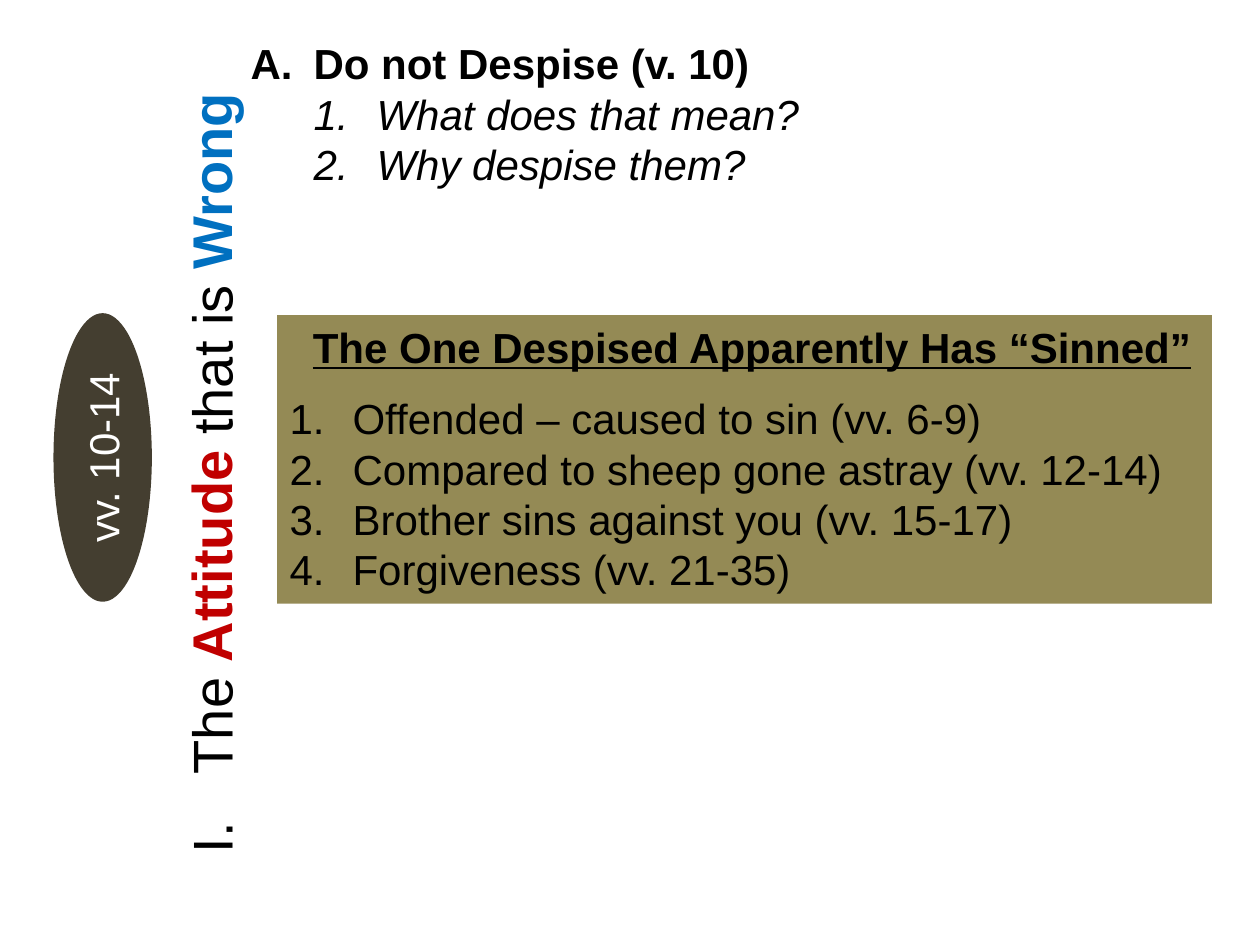
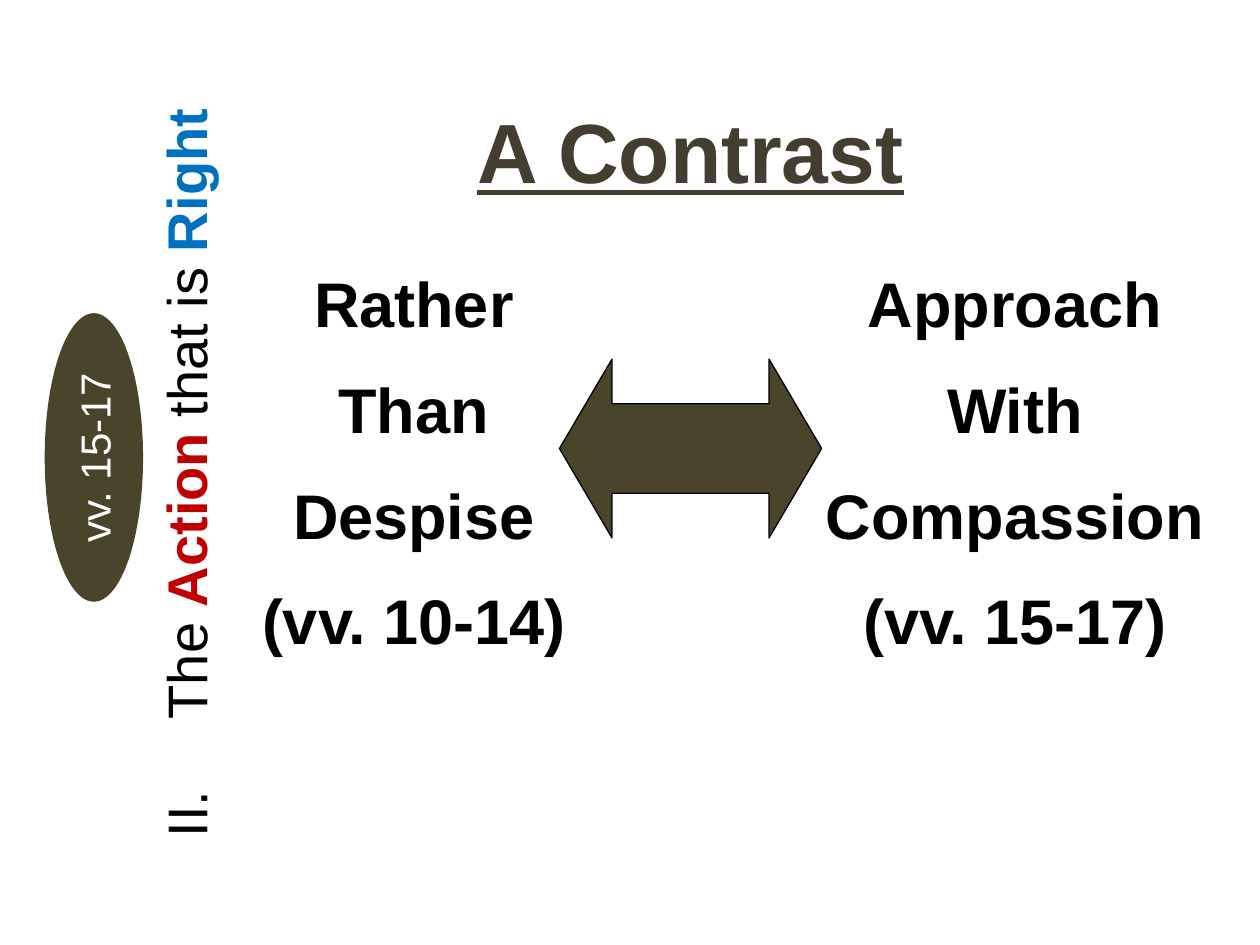
"""Build two outline slides on attitude and action, with a shared sideways heading."""
import pptx
import pptx.util
import pptx.dml.color
import pptx.enum.shapes
import pptx.enum.text
import lxml.etree
from pptx.oxml.ns import qn

Pt = pptx.util.Pt
RGBColor = pptx.dml.color.RGBColor
Shape = pptx.enum.shapes.MSO_SHAPE
Align = pptx.enum.text.PP_ALIGN
Anchor = pptx.enum.text.MSO_ANCHOR

BLACK = RGBColor(0x00, 0x00, 0x00)
WHITE = RGBColor(0xFF, 0xFF, 0xFF)
RED = RGBColor(0xC0, 0x00, 0x00)
BLUE = RGBColor(0x00, 0x70, 0xC0)
BROWN = RGBColor(0x44, 0x3E, 0x30)
OLIVE = RGBColor(0x4A, 0x45, 0x2A)
KHAKI = RGBColor(0x94, 0x8A, 0x55)
FONT = "Arial"
HANG = 36


def write(shape, lines, size, color=BLACK, bold=False, align=Align.LEFT, spacing=None):
    """Fill a shape with uniformly styled lines and return its paragraphs."""
    frame = shape.text_frame
    frame.text = "\n".join(lines)
    frame.word_wrap = True
    for para in frame.paragraphs:
        para.alignment = align
        para.line_spacing = spacing
        for span in para.runs:
            span.font.name = FONT
            span.font.size = Pt(size)
            span.font.bold = bold
            span.font.color.rgb = color
    return frame.paragraphs


def number(para, scheme, hang, margin, start=1):
    """Give a paragraph a hanging automatic number."""
    properties = para._p.get_or_add_pPr()
    properties.set("marL", str(int(Pt(margin))))
    properties.set("indent", str(int(Pt(-hang))))
    bullet = lxml.etree.SubElement(properties, qn("a:buAutoNum"), type=scheme)
    if start > 1:
        bullet.set("startAt", str(start))


deck = pptx.Presentation()
deck.slide_width, deck.slide_height = Pt(720), Pt(540)

sections = [
    ("Attitude", "Wrong", "vv. 10-14", BROWN, (-162.7, 241.2, 540, 58.3), 45, -23.8),
    ("Action", "Right", "vv. 15-17", OLIVE, (-173.5, 237.6, 540, 65.5), 67.5, -28.8),
]
pages = []
for order, (topic, verdict, verses, oval_color, bounds, hang, oval_left) in enumerate(sections, 1):
    page = deck.slides.add_slide(deck.slide_layouts[6])
    pages.append(page)

    heading = page.shapes.add_textbox(*map(Pt, bounds))
    heading.rotation = 270
    heading.text_frame.word_wrap = True
    para = heading.text_frame.paragraphs[0]
    para.alignment = Align.CENTER
    para.line_spacing = 1.5
    number(para, "romanUcPeriod", hang, hang, order)
    for words, color in [("The ", BLACK), (topic, RED), (" that is ", BLACK), (verdict, BLUE)]:
        span = para.add_run()
        span.text = words
        span.font.name = FONT
        span.font.size = Pt(32)
        span.font.bold = color != BLACK
        span.font.color.rgb = color

    oval = page.shapes.add_shape(Shape.OVAL, Pt(oval_left), Pt(233.3), Pt(164.9), Pt(56.2))
    oval.rotation = 270
    oval.shadow.inherit = False
    oval.fill.solid()
    oval.fill.fore_color.rgb = oval_color
    oval.line.fill.background()
    oval.text_frame.vertical_anchor = Anchor.MIDDLE
    write(oval, [verses], 24, WHITE, align=Align.CENTER)

attitude_page, action_page = pages

outline = attitude_page.shapes.add_textbox(Pt(136.1), Pt(18), Pt(553.7), Pt(94.3))
point, *questions = write(
    outline, ["Do not Despise (v. 10)", "What does that mean?", "Why despise them?"], 24)
number(point, "alphaUcPeriod", HANG, HANG)
point.runs[0].font.bold = True
for question in questions:
    question.level = 1
    number(question, "arabicPeriod", HANG, 2 * HANG)
    question.runs[0].font.italic = True

panel = attitude_page.shapes.add_textbox(Pt(158.4), Pt(180), Pt(534.2), Pt(164.9))
panel.fill.solid()
panel.fill.fore_color.rgb = KHAKI
caption, *evidence = write(panel, [
    "The One Despised Apparently Has “Sinned”",
    "Offended – caused to sin (vv. 6-9)",
    "Compared to sheep gone astray (vv. 12-14)",
    "Brother sins against you (vv. 15-17)",
    "Forgiveness (vv. 21-35)",
], 24)
caption._p.get_or_add_pPr().set("marL", str(int(Pt(13.3))))
caption.runs[0].font.bold = True
caption.runs[0].font.underline = True
for item in evidence:
    number(item, "arabicPeriod", HANG, HANG)
evidence[0].space_before = Pt(12)

arrow = action_page.shapes.add_shape(
    Shape.LEFT_RIGHT_ARROW, Pt(319.7), Pt(205.2), Pt(149.8), Pt(102.2))
arrow.adjustments[0] = 0.5
arrow.adjustments[1] = 0.294
arrow.shadow.inherit = False
arrow.fill.solid()
arrow.fill.fore_color.rgb = OLIVE
arrow.line.color.rgb = BLACK
arrow.line.width = Pt(0.75)

for left, width, lines in [
    (141.8, 189.4, ["Rather", "Than", "Despise", "(vv. 10-14)"]),
    (463.7, 232.6, ["Approach", "With", "Compassion", "(vv. 15-17)"]),
]:
    column = action_page.shapes.add_textbox(Pt(left), Pt(130.3), Pt(width), Pt(251.3))
    write(column, lines, 36, bold=True, align=Align.CENTER, spacing=1.4)

title = action_page.shapes.add_textbox(Pt(117.4), Pt(53.3), Pt(554.4), Pt(65.5))
para = write(title, ["A Contrast"], 48, BROWN, bold=True, align=Align.CENTER)[0]
para.runs[0].font.underline = True

deck.save("out.pptx")
